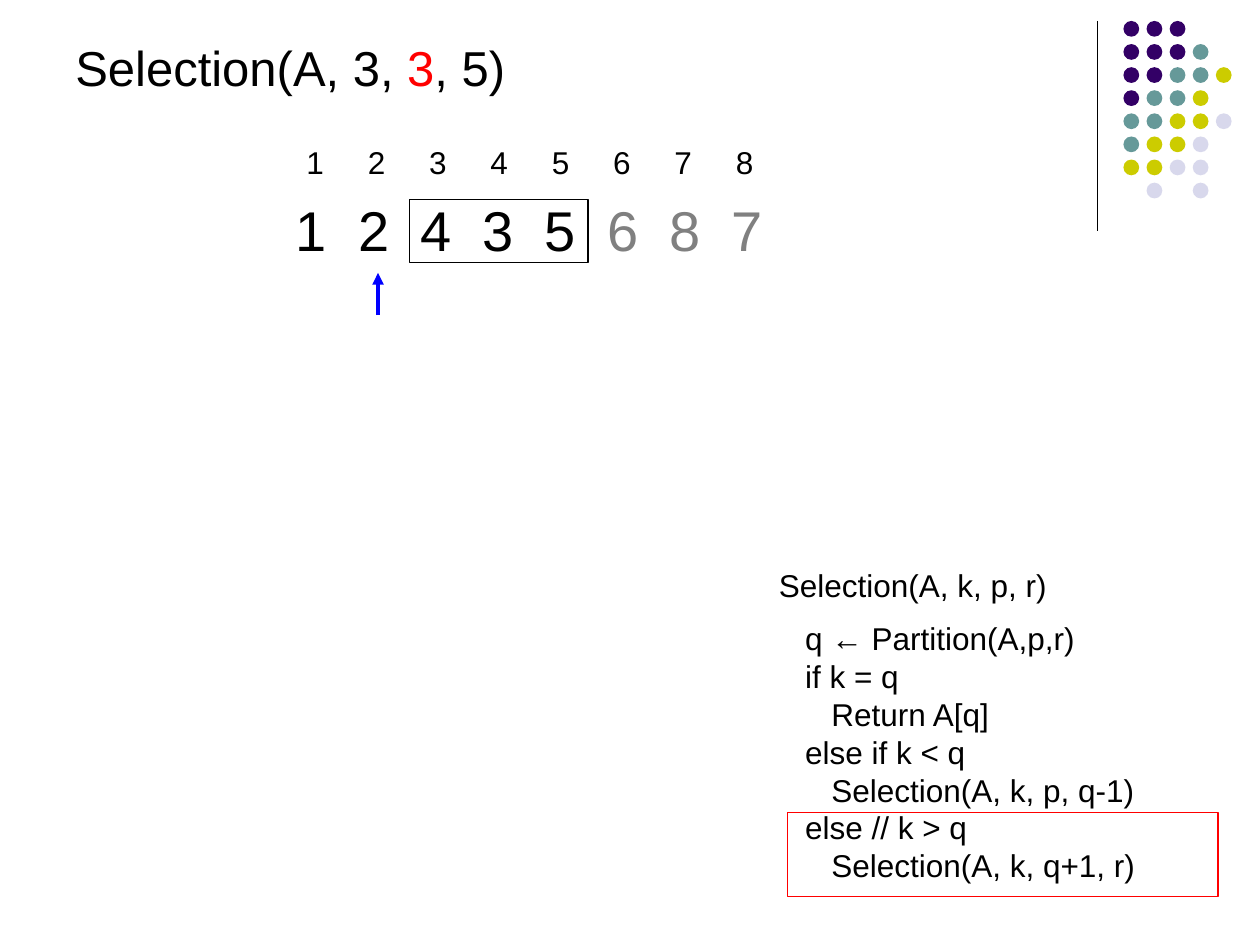
from lxml import etree
from pptx import Presentation
from pptx import util as u
from pptx.dml.color import RGBColor
from pptx.enum import shapes, text
from pptx.oxml.ns import qn

PX = 7620  # EMU per px, 120 px to the inch
BLACK = RGBColor(0x00, 0x00, 0x00)
RED = RGBColor(0xFF, 0x00, 0x00)
BLUE = RGBColor(0x00, 0x00, 0xFF)
GRAY = RGBColor(0x80, 0x80, 0x80)
PURPLE = RGBColor(0x33, 0x00, 0x66)
TEAL = RGBColor(0x66, 0x99, 0x99)
OLIVE = RGBColor(0xCC, 0xCC, 0x00)
LILAC = RGBColor(0xD8, 0xD8, 0xEC)

DOT_COLORS = {"P": PURPLE, "T": TEAL, "O": OLIVE, "L": LILAC}
DOT_ROWS = ["PPP", "PPPT", "PPTTO", "PTTO", "TTOOL", "TOOL", "OOLL", ".L.L"]

# Indent level and wording of each line of the procedure
CODE = [
    (0, "Selection(A, k, p, r)"),
    (1, "q ← Partition(A,p,r)"),
    (1, "if k = q"),
    (2, "Return A[q]"),
    (1, "else if k < q"),
    (2, "Selection(A, k, p, q-1)"),
    (1, "else // k > q"),
    (2, "Selection(A, k, q+1, r)"),
]


class Painter:
    font = "Arial"
    leading = 1.2
    indent = 25

    def __init__(self, page):
        self.page = page

    def text_box(self, x, y, w, h):
        box = self.page.shapes.add_textbox(x * PX, y * PX, w * PX, h * PX)
        box.text_frame.word_wrap = True
        box.text_frame.auto_size = text.MSO_AUTO_SIZE.SHAPE_TO_FIT_TEXT
        return box.text_frame

    def line(self, para, size, parts, level=0, before=0):
        para.line_spacing = u.Pt(size * self.leading)
        para.space_before = u.Pt(before)
        if level:
            props = para._p.get_or_add_pPr()
            props.set("marL", str(level * self.indent * PX))
            props.set("indent", "0")
        for words, color in parts:
            span = para.add_run()
            span.text = words
            style = {"name": self.font, "size": u.Pt(size)}
            for key, value in style.items():
                setattr(span.font, key, value)
            span.font.color.rgb = color

    def tabs(self, para, count, reach):
        """Set equally spaced stops, the last one at reach."""
        stops = etree.SubElement(para._p.get_or_add_pPr(), qn("a:tabLst"))
        for i in range(1, count + 1):
            position = str(round(reach * i / count * PX))
            etree.SubElement(stops, qn("a:tab"), pos=position, algn="l")

    def row(self, x, y, w, h, size, reach, parts):
        para = self.text_box(x, y, w, h).paragraphs[0]
        self.line(para, size, parts)
        self.tabs(para, 7, reach)

    def dot(self, x, y, color):
        dot = self.page.shapes.add_shape(
            shapes.MSO_SHAPE.OVAL, x * PX, y * PX, 15 * PX, 15 * PX)
        dot.shadow.inherit = False
        dot.fill.solid()
        dot.fill.fore_color.rgb = color
        dot.line.fill.background()

    def frame(self, x, y, w, h, color):
        frame = self.page.shapes.add_shape(
            shapes.MSO_SHAPE.RECTANGLE, x * PX, y * PX, w * PX, h * PX)
        frame.shadow.inherit = False
        frame.fill.background()
        frame.line.color.rgb = color
        frame.line.width = u.Pt(0.75)

    def stroke(self, x1, y1, x2, y2, color, width, arrow=False):
        stroke = self.page.shapes.add_connector(
            shapes.MSO_CONNECTOR.STRAIGHT, x1 * PX, y1 * PX, x2 * PX, y2 * PX)
        stroke.line.color.rgb = color
        stroke.line.width = u.Pt(width)
        if arrow:
            etree.SubElement(stroke.line._get_or_add_ln(), qn("a:tailEnd"), type="triangle")
        etree.SubElement(stroke._element.spPr, qn("a:effectLst"))


def main():
    deck = Presentation()
    deck.slide_width, deck.slide_height = 1200 * PX, 900 * PX
    painter = Painter(deck.slides.add_slide(deck.slide_layouts[6]))

    # Corner decoration
    painter.stroke(1045, 20, 1045, 220, BLACK, 0.75)
    for r, row in enumerate(DOT_ROWS):
        for c, key in enumerate(row):
            if key in DOT_COLORS:
                painter.dot(1070 + 22 * c, 20 + 22 * r, DOT_COLORS[key])

    # Title
    title = painter.text_box(60, 30, 770, 68).paragraphs[0]
    painter.line(title, 28, [("Selection(A, 3, ", BLACK), ("3", RED), (", 5)", BLACK)])

    # Array with its indices, active range and pivot arrow
    painter.row(270, 180, 550, 76, 32, 415,
                [("1\t2\t4\t3\t5\t", BLACK), ("6\t8\t7", GRAY)])
    painter.stroke(360, 300, 360, 260, BLUE, 2.25, arrow=True)
    painter.frame(390, 190, 170, 60, BLACK)
    indices = "\t".join(str(i) for i in range(1, 9))
    painter.row(280, 130, 500, 48, 18, 409, [(indices, BLACK)])

    # Procedure with the branch taken
    painter.frame(750, 774, 410, 80, RED)
    frame = painter.text_box(730, 533, 450, 322)
    for i, (level, words) in enumerate(CODE):
        para = frame.add_paragraph() if i else frame.paragraphs[0]
        painter.line(para, 18, [(words, BLACK)], level, before=9 if i == 1 else 0)

    deck.save("out.pptx")


if __name__ == "__main__":
    main()
